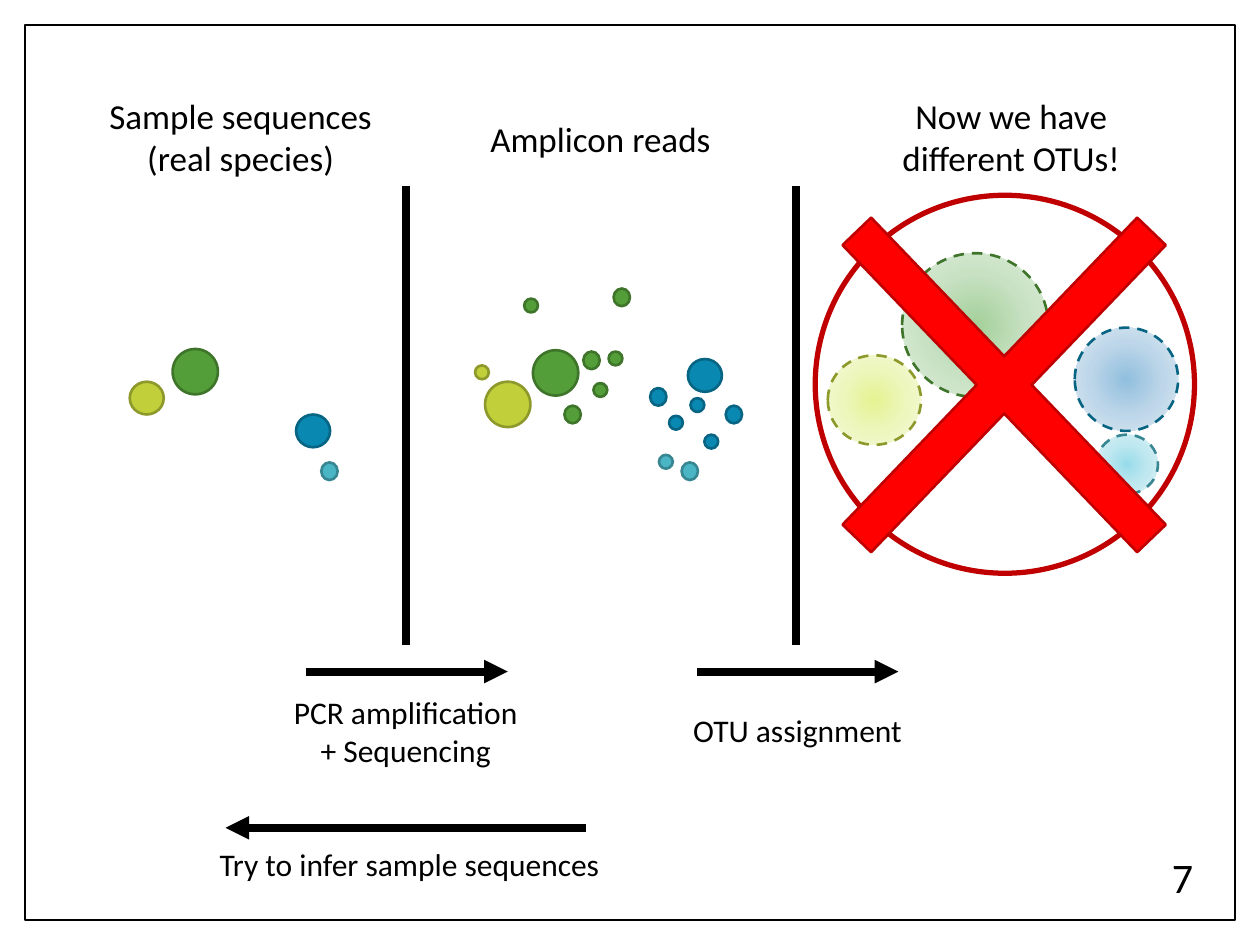
from pptx import Presentation
from pptx.dml.color import RGBColor
from pptx.enum.dml import MSO_LINE
from pptx.enum.shapes import MSO_CONNECTOR, MSO_SHAPE
from pptx.enum.text import MSO_ANCHOR, PP_ALIGN
from pptx.oxml import parse_xml
from pptx.oxml.ns import nsdecls, qn
from pptx.util import Inches, Pt
from lxml.etree import SubElement

BLACK = RGBColor(0x00, 0x00, 0x00)
WHITE = RGBColor(0xFF, 0xFF, 0xFF)
RED = RGBColor(0xFF, 0x00, 0x00)
DARK_RED = RGBColor(0xC0, 0x00, 0x00)
GREEN = RGBColor(0x54, 0x9E, 0x39)
DARK_GREEN = RGBColor(0x3E, 0x75, 0x2A)
LIME = RGBColor(0xC0, 0xCF, 0x3A)
DARK_LIME = RGBColor(0x8E, 0x99, 0x2B)
BLUE = RGBColor(0x09, 0x89, 0xB1)
DARK_BLUE = RGBColor(0x07, 0x65, 0x83)
TEAL = RGBColor(0x4A, 0xB5, 0xC4)
DARK_TEAL = RGBColor(0x37, 0x86, 0x91)
GREEN_GLOW = [RGBColor(0xA3, 0xD0, 0x99), RGBColor(0xC7, 0xE1, 0xC2), RGBColor(0xE3, 0xEF, 0xE1)]
BLUE_GLOW = [RGBColor(0x91, 0xBF, 0xDE), RGBColor(0xBD, 0xD6, 0xE9), RGBColor(0xDF, 0xEB, 0xF3)]
LIME_GLOW = [RGBColor(0xE5, 0xF3, 0x92), RGBColor(0xED, 0xF6, 0xBD), RGBColor(0xF6, 0xFA, 0xDF)]
TEAL_GLOW = [RGBColor(0x98, 0xDC, 0xEA), RGBColor(0xC0, 0xE8, 0xF0), RGBColor(0xE0, 0xF3, 0xF7)]

OUTLINES = {GREEN: DARK_GREEN, LIME: DARK_LIME, BLUE: DARK_BLUE, TEAL: DARK_TEAL}
TINY, SMALL, MEDIUM, LARGE = (0.11, 0.11), (0.13, 0.14), (0.27, 0.26), (0.36, 0.36)

SAMPLE_SPECIES = [
    (GREEN, LARGE, [(1.37, 2.77)]),
    (LIME, MEDIUM, [(1.03, 3.03)]),
    (BLUE, MEDIUM, [(2.35, 3.29)]),
    (TEAL, SMALL, [(2.55, 3.67)]),
]
AMPLICON_READS = [
    (LIME, LARGE, [(3.85, 3.03)]),
    (LIME, TINY, [(3.77, 2.9)]),
    (GREEN, LARGE, [(4.23, 2.78)]),
    (GREEN, SMALL, [(4.87, 2.29), (4.48, 3.22), (4.63, 2.79)]),
    (GREEN, TINY, [(4.16, 2.37), (4.71, 3.04), (4.83, 2.79)]),
    (BLUE, MEDIUM, [(5.46, 2.85)]),
    (BLUE, SMALL, [(5.16, 3.08), (5.76, 3.22)]),
    (BLUE, TINY, [(5.31, 3.3), (5.48, 3.16), (5.59, 3.45)]),
    (TEAL, SMALL, [(5.41, 3.67)]),
    (TEAL, TINY, [(5.23, 3.61)]),
]
OTU_CLOUDS = [
    (GREEN_GLOW, DARK_GREEN, (7.16, 2.01, 1.16, 1.14)),
    (BLUE_GLOW, DARK_BLUE, (8.53, 2.6, 0.82, 0.82)),
    (LIME_GLOW, DARK_LIME, (6.57, 2.82, 0.74, 0.71)),
    (TEAL_GLOW, DARK_TEAL, (8.7, 3.45, 0.49, 0.47)),
]


def add_outlined(slide, kind, place, outline, width=1.5, fill=None):
    shape = slide.shapes.add_shape(kind, *map(Inches, place))
    shape.shadow.inherit = False
    if fill is None:
        shape.fill.background()
    else:
        shape.fill.solid()
        shape.fill.fore_color.rgb = fill
    shape.line.color.rgb = outline
    shape.line.width = Pt(width)
    return shape


def add_dots(slide, groups):
    for color, size, corners in groups:
        for corner in corners:
            add_outlined(slide, MSO_SHAPE.OVAL, corner + size, OUTLINES[color], fill=color)


def add_cloud(slide, glow, outline, place):
    cloud = add_outlined(slide, MSO_SHAPE.OVAL, place, outline)
    cloud.line.dash_style = MSO_LINE.DASH
    stops = "".join(
        f'<a:gs pos="{index * 50000}"><a:srgbClr val="{color}"/></a:gs>'
        for index, color in enumerate(glow)
    )
    gradient = parse_xml(
        f'<a:gradFill {nsdecls("a")}><a:gsLst>{stops}</a:gsLst><a:path path="circle">'
        '<a:fillToRect l="50000" t="50000" r="50000" b="50000"/></a:path></a:gradFill>'
    )
    properties = cloud.element.spPr
    properties.replace(properties.find(qn("a:noFill")), gradient)


def add_line(slide, start, end, arrow=False):
    line = slide.shapes.add_connector(MSO_CONNECTOR.STRAIGHT, *map(Inches, start + end))
    line.line.color.rgb = BLACK
    line.line.width = Pt(4.5)
    if arrow:
        SubElement(line.line._get_or_add_ln(), qn("a:tailEnd"), type="triangle")
    SubElement(line.element.spPr, qn("a:effectLst"))


def add_text(slide, text, place, size=18, anchor=MSO_ANCHOR.TOP):
    box = slide.shapes.add_textbox(*map(Inches, place))
    frame = box.text_frame
    frame.word_wrap = True
    frame.vertical_anchor = anchor
    frame.text = text
    for para in frame.paragraphs:
        para.alignment = PP_ALIGN.CENTER
        para.font.name = "Calibri"
        para.font.size = Pt(size)
        para.font.color.rgb = BLACK


def main():
    deck = Presentation()
    deck.slide_width, deck.slide_height = Inches(10), Inches(7.5)
    slide = deck.slides.add_slide(deck.slide_layouts[6])
    add_outlined(slide, MSO_SHAPE.RECTANGLE, (0.2, 0.2, 9.6, 7.1), BLACK, width=1, fill=WHITE)

    add_text(slide, "Sample sequences\n(real species)", (0.71, 0.7, 2.4, 0.77), size=20)
    add_text(slide, "Amplicon reads", (3.67, 0.88, 2.19, 0.44), size=20)
    add_text(slide, "Now we have different OTUs!", (6.93, 0.7, 2.19, 0.77), size=20)

    add_dots(slide, SAMPLE_SPECIES)
    add_dots(slide, AMPLICON_READS)
    for divider in (3.22, 6.32):
        add_line(slide, (divider, 1.48), (divider, 5.12))
    for start in (2.43, 5.53):
        add_line(slide, (start, 5.33), (start + 1.6, 5.33), arrow=True)
    add_text(slide, "PCR amplification + Sequencing", (2.23, 5.45, 1.98, 1.01))
    add_text(slide, "OTU assignment", (5.34, 5.59, 1.98, 0.4))

    for glow, outline, place in OTU_CLOUDS:
        add_cloud(slide, glow, outline, place)
    add_text(slide, "7", (9.1, 6.76, 0.57, 0.4), size=24, anchor=MSO_ANCHOR.MIDDLE)
    add_outlined(slide, MSO_SHAPE.OVAL, (6.47, 1.55, 3.01, 3), DARK_RED, width=3)
    cross = add_outlined(
        slide, MSO_SHAPE.MATH_MULTIPLY, (5.72, 0.71, 4.5, 4.69), DARK_RED, fill=RED
    )
    cross.adjustments[0] = 0.07

    add_line(slide, (4.65, 6.57), (1.79, 6.57), arrow=True)
    add_text(slide, "Try to infer sample sequences", (1.59, 6.66, 3.32, 0.4))
    deck.save("out.pptx")


if __name__ == "__main__":
    main()
